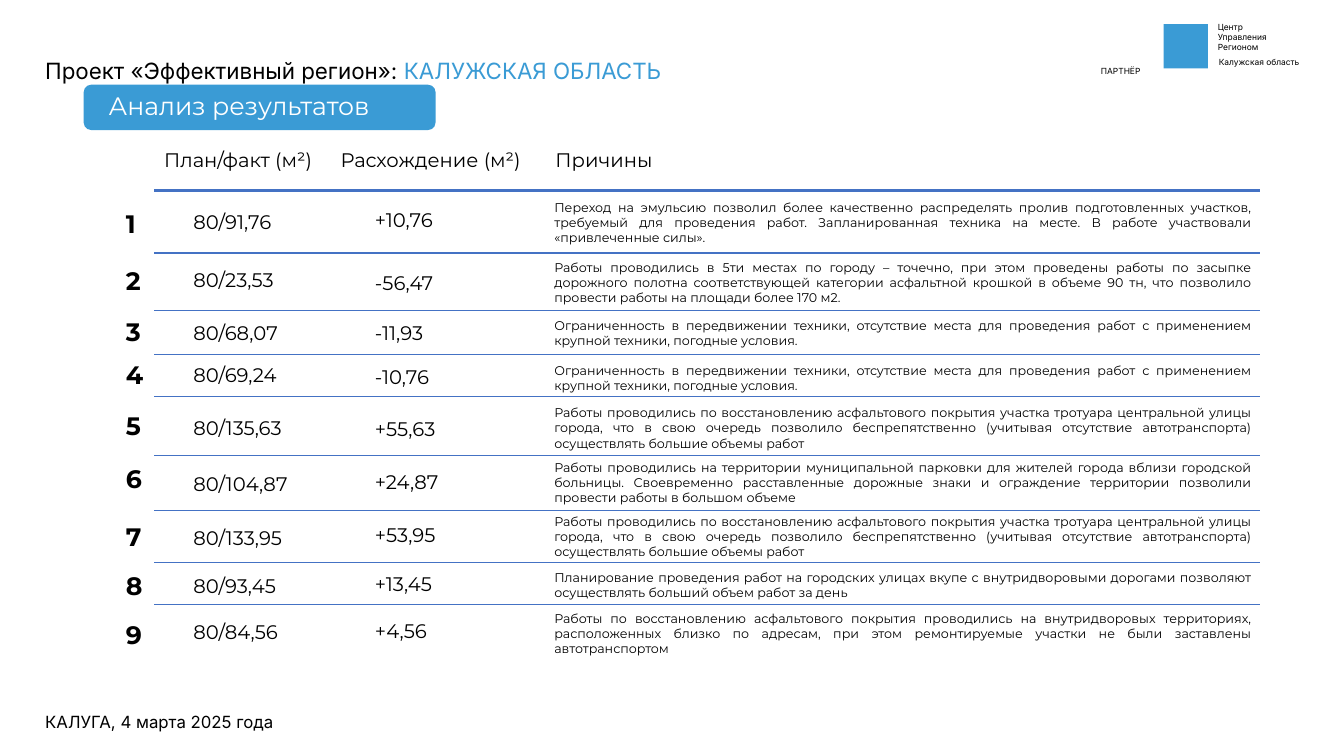
from lxml.etree import SubElement
from pptx import Presentation
from pptx.dml.color import RGBColor
from pptx.enum.shapes import MSO_CONNECTOR as Connector, MSO_SHAPE as Shape
from pptx.enum.text import MSO_AUTO_SIZE as AutoSize, PP_ALIGN as Align
from pptx.oxml.ns import qn
from pptx.util import Inches, Pt

BLUE, BLACK, WHITE, RULE = "3A9BD5", "000000", "FFFFFF", "4472C4"
RULE_LEFT, RULE_RIGHT = 1.53, 12.5
HEADER_TOP, HEADER_RULE = 1.42, 1.89
NUMBER_LEFT, PLAN_LEFT, DIFFERENCE_LEFT, REASON_LEFT = 1.15, 1.82, 3.62, 5.4

HEADERS = [
    (1.53, 1.88, "План/факт (м²)"),
    (3.28, 2.21, "Расхождение (м²)"),
    (5.41, 2.21, "Причины"),
]

WEATHER = ("Ограниченность в передвижении техники, отсутствие места для проведения "
           "работ с применением крупной техники, погодные условия.")
SIDEWALK = ("Работы проводились по восстановлению асфальтового покрытия участка тротуара "
            "центральной улицы города, что в свою очередь позволило беспрепятственно "
            "(учитывая отсутствие автотранспорта) осуществлять большие объемы работ")

# Plan and fact, difference, reason, then the tops of number, plan, difference and reason
ROWS = [
    ("80/91,76", "+10,76",
     "Переход на эмульсию позволил более качественно распределять пролив подготовленных "
     "участков, требуемый для проведения работ. Запланированная техника на месте. "
     "В работе участвовали «привлеченные силы».",
     (2.02, 2.03, 2.01, 1.93)),
    ("80/23,53", "-56,47",
     "Работы проводились в 5ти местах по городу – точечно, при этом проведены работы по "
     "засыпке дорожного полотна соответствующей категории асфальтной крошкой в объеме "
     "90 тн, что позволило провести работы на площади более 170 м2.",
     (2.58, 2.61, 2.64, 2.53)),
    ("80/68,07", "-11,93", WEATHER, (3.09, 3.13, 3.13, 3.1)),
    ("80/69,24", "-10,76", WEATHER, (3.52, 3.55, 3.57, 3.55)),
    ("80/135,63", "+55,63", SIDEWALK, (4.02, 4.08, 4.09, 3.97)),
    ("80/104,87", "+24,87",
     "Работы проводились на территории муниципальной парковки для жителей города вблизи "
     "городской больницы. Своевременно расставленные дорожные знаки и ограждение "
     "территории позволили провести работы в большом объеме",
     (4.55, 4.63, 4.61, 4.51)),
    ("80/133,95", "+53,95", SIDEWALK, (5.12, 5.17, 5.14, 5.05)),
    ("80/93,45", "+13,45",
     "Планирование проведения работ на городских улицах вкупе с внутридворовыми дорогами "
     "позволяют осуществлять больший объем работ за день",
     (5.61, 5.64, 5.62, 5.6)),
    ("80/84,56", "+4,56",
     "Работы по восстановлению асфальтового покрытия проводились на внутридворовых "
     "территориях, расположенных близко по адресам, при этом ремонтируемые участки не "
     "были заставлены автотранспортом",
     (6.09, 6.1, 6.09, 6.01)),
]
ROW_RULES = [2.51, 3.08, 3.52, 3.93, 4.52, 5.06, 5.58, 6]


def color(value):
    return RGBColor.from_string(value)


class SlideBuilder:
    """Draws styled elements on one slide, with lengths in inches."""

    def __init__(self, slide):
        self.shapes = slide.shapes

    def block(self, kind, left, top, width, height, fill):
        shape = self.shapes.add_shape(
            kind, Inches(left), Inches(top), Inches(width), Inches(height))
        shape.shadow.inherit = False
        shape.fill.solid()
        shape.fill.fore_color.rgb = color(fill)
        shape.line.fill.background()

    def rule(self, top, weight=0.75):
        line = self.shapes.add_connector(
            Connector.STRAIGHT, Inches(RULE_LEFT), Inches(top),
            Inches(RULE_RIGHT), Inches(top))
        line.line.color.rgb = color(RULE)
        line.line.width = Pt(weight)
        SubElement(line._element.spPr, qn("a:effectLst"))

    def text(self, left, top, width, height, text, size, font="Montserrat",
             fill=BLACK, bold=False, align=Align.LEFT, spacing=None):
        """Add a text box with one paragraph per line and return its frame."""
        box = self.shapes.add_textbox(
            Inches(left), Inches(top), Inches(width), Inches(height))
        frame = box.text_frame
        frame.word_wrap = True
        frame.auto_size = AutoSize.NONE
        frame.text = text
        for paragraph in frame.paragraphs:
            paragraph.alignment = align
            paragraph.line_spacing = spacing
            for run in paragraph.runs:
                self.format_run(run, size, font, fill, bold)
        return frame

    def format_run(self, run, size, font, fill, bold=False):
        run.font.size = Pt(size)
        run.font.name = font
        run.font.bold = bold
        run.font.color.rgb = color(fill)

    def cell(self, left, top, width, height, text, size, bold=False):
        self.text(left, top, width, height, text, size, bold=bold, align=Align.JUSTIFY)


def draw_frame(builder):
    """Draw the logo block, project title, banner and footer."""
    builder.block(Shape.RECTANGLE, 11.54, 0.24, 0.44, 0.44, BLUE)
    builder.text(11.98, 0.17, 1.35, 0.4, "Центр\nУправления\nРегионом", 6, "Inter")
    builder.text(11.99, 0.52, 1.34, 0.2, "Калужская область", 6, "Inter")
    builder.text(10.73, 0.61, 0.77, 0.2, "ПАРТНЁР", 6, "Inter", align=Align.CENTER)
    title = builder.text(0.35, -0.08, 6.6, 0.81, "Проект «Эффективный регион»: ",
                         16, "Inter", spacing=Pt(62))
    region = title.paragraphs[0].add_run()
    region.text = "КАЛУЖСКАЯ ОБЛАСТЬ"
    builder.format_run(region, 16, "Inter", BLUE)
    builder.text(0.35, 6.35, 2.8, 0.81, "КАЛУГА, 4 марта 2025 года",
                 12, "Inter", spacing=Pt(62))
    builder.block(Shape.ROUNDED_RECTANGLE, 0.83, 0.84, 3.49, 0.45, BLUE)
    builder.text(0.98, 0.88, 3.9, 0.53, "Анализ результатов", 18, fill=WHITE, spacing=0.9)


def draw_results(builder):
    for left, width, header in HEADERS:
        builder.cell(left, HEADER_TOP, width, 0.34, header, 14)
    builder.rule(HEADER_RULE, 1.5)
    for top in ROW_RULES:
        builder.rule(top)
    for number, (plan, difference, reason, tops) in enumerate(ROWS, start=1):
        number_top, plan_top, difference_top, reason_top = tops
        builder.cell(NUMBER_LEFT, number_top, 0.39, 0.4, str(number), 18, bold=True)
        builder.cell(PLAN_LEFT, plan_top, 1.88, 0.34, plan, 14)
        builder.cell(DIFFERENCE_LEFT, difference_top, 1.88, 0.34, difference, 14)
        reason_height = 0.56 if len(reason) > 140 else 0.4
        builder.cell(REASON_LEFT, reason_top, 7.1, reason_height, reason, 9)


def main():
    presentation = Presentation()
    presentation.slide_width = Inches(13.33)
    presentation.slide_height = Inches(7.5)
    slide = presentation.slides.add_slide(presentation.slide_layouts[6])
    builder = SlideBuilder(slide)
    draw_frame(builder)
    draw_results(builder)
    presentation.save("out.pptx")


if __name__ == "__main__":
    main()
